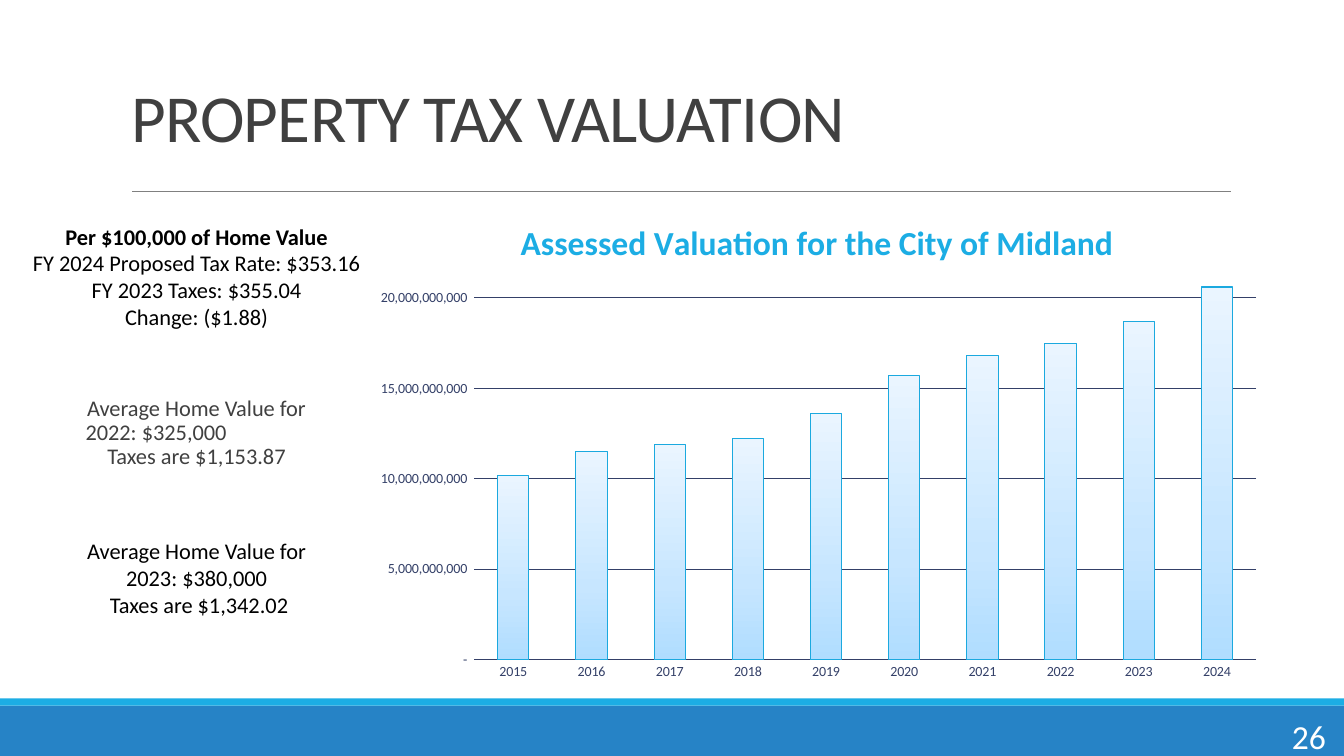
from copy import deepcopy
from dataclasses import dataclass

from pptx import Presentation
from pptx.chart.data import CategoryChartData as ChartData
from pptx.dml.color import RGBColor as Rgb
from pptx.enum.chart import XL_CHART_TYPE as Kind, XL_TICK_MARK as Tick
from pptx.enum.shapes import MSO_CONNECTOR as Link, MSO_SHAPE as Shape
from pptx.enum.text import MSO_ANCHOR as Anchor, PP_ALIGN as Align
from pptx.oxml import parse_xml
from pptx.oxml.ns import nsdecls, qn
from pptx.util import Inches, Pt

TITLE = "PROPERTY TAX VALUATION"
PAGE = "26"
HEAD = "Assessed Valuation for the City of Midland"
START = 2015
VALUES = [10.2, 11.5, 11.9, 12.2, 13.6, 15.7, 16.8, 17.5, 18.7, 20.6]
BILLION = 10**9
FORMAT = r'_(* #,##0_);_(* \(#,##0\);_(* "-"_);_(@_)'


@dataclass(frozen=True)
class Theme:
    font: str = "Calibri"
    dark: str = "404040"
    black: str = "000000"
    white: str = "FFFFFF"
    blue: str = "2683C6"
    sky: str = "1CADE4"
    edge: str = "1BA9DF"
    navy: str = "344068"
    rule: str = "808080"
    fade: tuple = ((0, "B0DDFF"), (0.35, "C7E6FF"), (1, "EAF5FF"))
    title: int = 48
    large: int = 24
    body: int = 16
    small: int = 10


T = Theme()

# Each note: box, colour, line spacing, bold first line, (text, left indent) lines
NOTES = [
    ((0.67, 3.89, 2.56, 0.83), T.dark, 0.9, False, [
        ("Average Home Value for", None),
        ("2022: $325,000", 0.08),
        ("Taxes are $1,153.87", None)]),
    ((0.69, 5.28, 2.52, 0.91), T.black, 1, False, [
        ("Average Home Value for 2023: $380,000", None),
        ("Taxes are $1,342.02", 0.3)]),
    ((0.09, 2.16, 3.72, 1.18), T.black, 1, True, [
        ("Per $100,000 of Home Value", None),
        ("FY 2024 Proposed Tax Rate: $353.16", None),
        ("FY 2023 Taxes: $355.04", None),
        ("Change: ($1.88)", None)]),
]


def style(font, size, color, bold=False):
    """Set the face, size, colour and weight of a font."""
    font.name, font.size, font.bold = T.font, Pt(size), bold
    font.color.rgb = Rgb.from_string(color)


def add_band(slide, box, color):
    """Add one plain footer band."""
    band = slide.shapes.add_shape(Shape.RECTANGLE, *map(Inches, box))
    band.shadow.inherit = False
    band.fill.solid()
    band.fill.fore_color.rgb = Rgb.from_string(color)
    band.line.fill.background()


def add_rule(slide):
    """Add the thin line under the title."""
    rule = slide.shapes.add_connector(Link.STRAIGHT, *map(Inches, (1.31, 1.9, 12.21, 1.9)))
    rule.line.color.rgb = Rgb.from_string(T.rule)
    rule.line.width = Pt(0.5)
    rule._element.spPr.append(parse_xml(f"<a:effectLst {nsdecls('a')}/>"))


def set_title(slide):
    """Place and format the title."""
    title = slide.shapes.title
    title.left, title.top, title.width, title.height = map(Inches, (1.2, 0.31, 11, 1.29))
    frame = title.text_frame
    frame.text, frame.vertical_anchor = TITLE, Anchor.BOTTOM
    para = frame.paragraphs[0]
    para.alignment, para.line_spacing = Align.LEFT, 0.85
    style(para.runs[0].font, T.title, T.dark)
    para.runs[0]._r.get_or_add_rPr().set("spc", "-50")


def add_note(slide, box, color, space, bold, lines):
    """Add a text box with centred or indented lines."""
    frame = slide.shapes.add_textbox(*map(Inches, box)).text_frame
    frame.word_wrap = True
    frame.text = "\n".join(text for text, _ in lines)
    for i, (para, (_, indent)) in enumerate(zip(frame.paragraphs, lines)):
        para.line_spacing = space
        para.alignment = Align.CENTER if indent is None else Align.LEFT
        if indent is not None:
            para._p.get_or_add_pPr().set("marL", str(Inches(indent)))
        style(para.runs[0].font, T.body, color, bold and i == 0)


def place(parent, index, sizes, inner=False):
    """Give a chart part a fixed layout, in fractions of the chart."""
    for old in parent.findall(qn("c:layout")):
        parent.remove(old)
    target = '<c:layoutTarget val="inner"/>' if inner else ""
    modes = '<c:xMode val="edge"/><c:yMode val="edge"/>'
    parts = "".join(f'<c:{key} val="{val}"/>' for key, val in zip("xywh", sizes))
    parent.insert(index, parse_xml(
        f"<c:layout {nsdecls('c')}><c:manualLayout>{target}{modes}{parts}"
        "</c:manualLayout></c:layout>"))


def fill_bars(series):
    """Shade the bars from bottom to top and outline them."""
    fill = series.format.fill
    fill.gradient()
    fill.gradient_angle = 90
    stops = series._element.find(".//" + qn("a:gsLst"))
    stops.append(deepcopy(stops[-1]))
    for stop, (pos, color) in zip(fill.gradient_stops, T.fade):
        stop.position = pos
        stop.color.rgb = Rgb.from_string(color)
    series.format.line.color.rgb = Rgb.from_string(T.edge)
    series.format.line.width = Pt(0.75)


def add_graph(slide):
    """Add the valuation column chart."""
    data = ChartData()
    data.categories = [str(START + i) for i in range(len(VALUES))]
    data.add_series("Series 1", [round(val * BILLION) for val in VALUES])
    box = map(Inches, (3.56, 1.93, 9.08, 4.92))
    chart = slide.shapes.add_chart(Kind.COLUMN_CLUSTERED, *box, data).chart
    style(chart.font, T.small, T.black)
    chart.has_legend = False
    chart.has_title = True
    frame = chart.chart_title.text_frame
    frame.text = HEAD
    style(frame.paragraphs[0].runs[0].font, T.large, T.sky, True)
    place(chart.chart_title._element, 1, (0.17, 0.04))
    plot = chart.plots[0]
    plot.gap_width, plot.vary_by_categories = 150, False
    place(plot._element.getparent(), 0, (0.126, 0.172, 0.854, 0.766), True)
    fill_bars(plot.series[0])
    for axis in (chart.category_axis, chart.value_axis):
        axis.major_tick_mark = axis.minor_tick_mark = Tick.NONE
        axis.format.line.fill.background()
        style(axis.tick_labels.font, T.small, T.navy)
    axis = chart.value_axis
    axis.minimum_scale, axis.maximum_scale = 0, 21 * BILLION
    axis.major_unit = 5 * BILLION
    axis.tick_labels.number_format = FORMAT
    axis.tick_labels.number_format_is_linked = False
    grid = axis.major_gridlines.format.line
    grid.color.rgb = Rgb.from_string(T.navy)
    grid.width = Pt(0.75)


def add_page(slide):
    """Add the slide number."""
    frame = slide.shapes.add_textbox(*map(Inches, (11.82, 7.1, 1.43, 0.4))).text_frame
    frame.word_wrap = True
    frame.text, frame.vertical_anchor = PAGE, Anchor.MIDDLE
    para = frame.paragraphs[0]
    para.alignment = Align.RIGHT
    style(para.runs[0].font, T.large, T.white)


def main():
    """Build the slide and save it."""
    deck = Presentation()
    deck.slide_width, deck.slide_height = Inches(13.33), Inches(7.5)
    slide = deck.slides.add_slide(deck.slide_layouts[5])
    add_band(slide, (0, 7, 13.33, 0.5), T.blue)
    add_band(slide, (0, 6.93, 13.33, 0.07), T.sky)
    add_rule(slide)
    set_title(slide)
    for note in NOTES:
        add_note(slide, *note)
    add_graph(slide)
    add_page(slide)
    deck.save("out.pptx")


if __name__ == "__main__":
    main()
